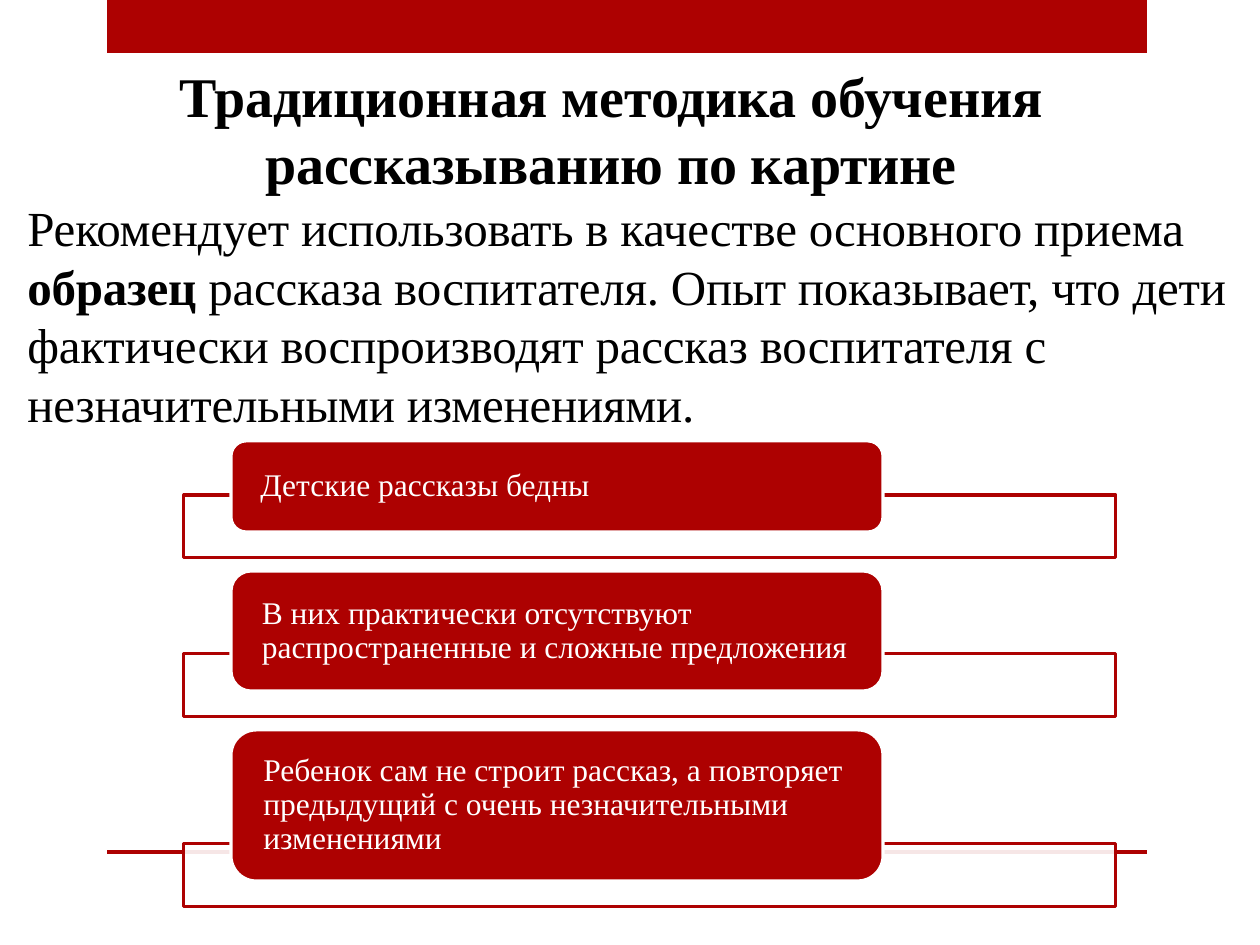
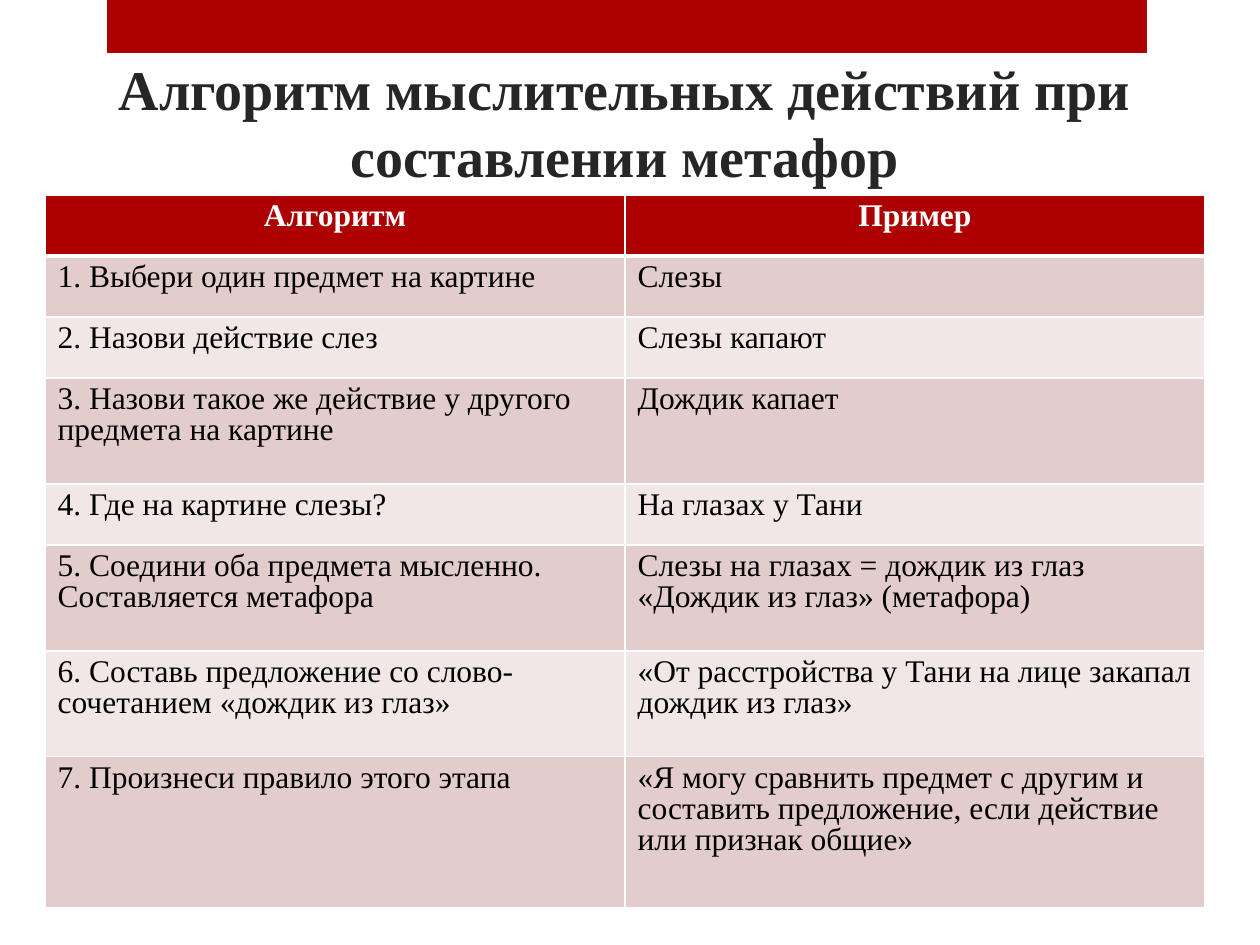
import dataclasses

import pptx
import pptx.dml.color
import pptx.enum.shapes
import pptx.enum.text
import pptx.oxml
import pptx.oxml.ns
import pptx.util

PX = 914400 / 126
FONT = "Times New Roman"
RED, WHITE, BLACK, CHARCOAL = "AD0101", "FFFFFF", "000000", "262626"
ROW_TINTS = ("E3CCCC", "F1E7E7")
SHAPES = pptx.enum.shapes.MSO_SHAPE
ANCHOR = pptx.enum.text.MSO_ANCHOR
ALIGN = pptx.enum.text.PP_ALIGN


@dataclasses.dataclass(frozen=True)
class Box:
    left: int
    top: int
    width: int
    height: int

    def emu(self) -> list[int]:
        return [px(n) for n in dataclasses.astuple(self)]


@dataclasses.dataclass(frozen=True)
class Style:
    size: int
    color: str
    bold: bool = False
    spacing: int = 0  # hundredths of a point


@dataclasses.dataclass(frozen=True)
class Finding:
    text: str
    height: int


@dataclasses.dataclass(frozen=True)
class Step:
    action: str
    example: str
    lines: int = 1


def px(length: int) -> int:
    return round(length * PX)


def rgb(color: str) -> pptx.dml.color.RGBColor:
    return pptx.dml.color.RGBColor.from_string(color)


def add_run(paragraph, text: str, style: Style) -> None:
    run = paragraph.add_run()
    run.text = text
    run.font.name = FONT
    run.font.size = pptx.util.Pt(style.size)
    run.font.bold = style.bold
    run.font.color.rgb = rgb(style.color)
    if style.spacing:
        run._r.get_or_add_rPr().set("spc", str(style.spacing))


def add_block(slide, kind, box: Box, fill: str, line: str = ""):
    block = slide.shapes.add_shape(kind, *box.emu())
    block.shadow.inherit = False
    block.fill.solid()
    block.fill.fore_color.rgb = rgb(fill)
    if line:
        block.line.color.rgb = rgb(line)
        block.line.width = pptx.util.Pt(1.75)
    else:
        block.line.fill.background()
    return block


# Shared frame: top band, bottom rule and title
BANDS = (Box(107, 0, 1040, 53), Box(107, 850, 1040, 4))


def add_slide(deck, text: str, box: Box, style: Style, anchor):
    slide = deck.slides.add_slide(deck.slide_layouts[5])
    for band in BANDS:
        add_block(slide, SHAPES.RECTANGLE, band, RED)
    title = slide.shapes.title
    title.left, title.top, title.width, title.height = box.emu()
    frame = title.text_frame
    frame.word_wrap = True
    frame.auto_size = pptx.enum.text.MSO_AUTO_SIZE.NONE
    frame.vertical_anchor = anchor
    frame.paragraphs[0].alignment = ALIGN.CENTER
    add_run(frame.paragraphs[0], text, style)
    return slide


# Slide 1: traditional method
FINDINGS = (
    Finding("Детские рассказы бедны", 91),
    Finding("В них практически отсутствуют распространенные и сложные предложения", 120),
    Finding("Ребенок сам не строит рассказ, а повторяет предыдущий "
            "с очень незначительными изменениями", 151),
)
FINDINGS_TOP, PANEL_HEIGHT, PANEL_OVERLAP, PANEL_GAP = 441, 63, 37, 13


def add_finding(slide, finding: Finding, top: int) -> int:
    """Draw a card over its panel and return the top of the next card."""
    panel_top = top + finding.height - PANEL_OVERLAP
    panel = add_block(slide, SHAPES.RECTANGLE,
                      Box(184, panel_top, 932, PANEL_HEIGHT), WHITE, RED)
    fill_color = panel.fill._xPr.find(".//" + pptx.oxml.ns.qn("a:srgbClr"))
    fill_color.append(pptx.oxml.parse_xml(
        f'<a:alpha {pptx.oxml.ns.nsdecls("a")} val="90000"/>'))

    card = add_block(slide, SHAPES.ROUNDED_RECTANGLE,
                     Box(231, top, 652, finding.height), RED, WHITE)
    frame = card.text_frame
    frame.word_wrap = True
    frame.vertical_anchor = ANCHOR.MIDDLE
    frame.margin_left = frame.margin_right = px(25)
    frame.margin_top = frame.margin_bottom = 0
    paragraph = frame.paragraphs[0]
    paragraph.alignment = ALIGN.LEFT
    paragraph.line_spacing = 0.9
    add_run(paragraph, finding.text, Style(18, WHITE))
    return panel_top + PANEL_HEIGHT + PANEL_GAP


def build_method_slide(deck) -> None:
    slide = add_slide(deck, "Традиционная методика обучения рассказыванию по картине",
                      Box(115, 55, 992, 149), Style(32, BLACK, True, -10), ANCHOR.TOP)
    advice = slide.shapes.add_textbox(*Box(15, 190, 1230, 250).emu()).text_frame
    advice.word_wrap = True
    advice.margin_right = px(6)
    advice.vertical_anchor = ANCHOR.MIDDLE
    plain, strong = Style(28, BLACK, False, -10), Style(28, BLACK, True, -10)
    for text, style in (
        ("Рекомендует использовать в качестве основного приема ", plain),
        ("образец", strong),
        (" рассказа воспитателя. Опыт показывает, что дети фактически воспроизводят "
         "рассказ воспитателя с незначительными изменениями.", plain),
    ):
        add_run(advice.paragraphs[0], text, style)

    top = FINDINGS_TOP
    for finding in FINDINGS:
        top = add_finding(slide, finding, top)


# Slide 2: algorithm table
HEADER = Step("Алгоритм", "Пример")
STEPS = (
    Step("1. Выбери один предмет на картине", "Слезы"),
    Step("2. Назови действие слез", "Слезы капают"),
    Step("3. Назови такое же действие у другого предмета на картине", "Дождик капает", 2),
    Step("4. Где на картине слезы?", "На глазах у Тани"),
    Step("5. Соедини оба предмета мысленно. Составляется метафора",
         "Слезы на глазах = дождик из глаз\n«Дождик из глаз» (метафора)", 2),
    Step("6. Составь предложение со слово-сочетанием «дождик из глаз»",
         "«От расстройства у Тани на лице закапал дождик из глаз»", 2),
    Step("7. Произнеси правило этого этапа",
         "«Я могу сравнить предмет с другим и составить предложение, "
         "если действие или признак общие»", 3),
)
COLUMN_WIDTH = 580


def row_height(step: Step) -> int:
    return 16 + 45 * step.lines


def set_borders(cell, widths: dict[str, int]) -> None:
    properties = cell._tc.get_or_add_tcPr()
    for index, (side, width) in enumerate(widths.items()):
        properties.insert(index, pptx.oxml.parse_xml(
            f'<a:{side} {pptx.oxml.ns.nsdecls("a")} w="{pptx.util.Pt(width)}">'
            f'<a:solidFill><a:srgbClr val="{WHITE}"/></a:solidFill></a:{side}>'))


def fill_cell(cell, text: str, row: int) -> None:
    is_header = row == 0
    cell.fill.solid()
    cell.fill.fore_color.rgb = rgb(RED if is_header else ROW_TINTS[(row - 1) % 2])
    set_borders(cell, {"lnL": 1, "lnR": 1, "lnT": 3 if row == 1 else 1,
                       "lnB": 3 if is_header else 1})
    paragraph = cell.text_frame.paragraphs[0]
    paragraph.alignment = ALIGN.CENTER if is_header else ALIGN.LEFT
    paragraph.line_spacing = 0.9
    style = Style(18, WHITE if is_header else BLACK, is_header)
    for index, line in enumerate(text.split("\n")):
        if index:
            paragraph.add_line_break()
        add_run(paragraph, line, style)


def build_algorithm_slide(deck) -> None:
    slide = add_slide(deck, "Алгоритм мыслительных действий при составлении метафор",
                      Box(54, 55, 1142, 140), Style(32, CHARCOAL, True), ANCHOR.BOTTOM)
    steps = (HEADER, *STEPS)
    area = Box(45, 195, 2 * COLUMN_WIDTH, sum(map(row_height, steps)))
    algorithm = slide.shapes.add_table(len(steps), 2, *area.emu()).table
    for column in algorithm.columns:
        column.width = px(COLUMN_WIDTH)
    for row, step in enumerate(steps):
        algorithm.rows[row].height = px(row_height(step))
        for column, text in enumerate((step.action, step.example)):
            fill_cell(algorithm.cell(row, column), text, row)


def main() -> None:
    deck = pptx.Presentation()
    deck.slide_width, deck.slide_height = px(1260), px(945)
    build_method_slide(deck)
    build_algorithm_slide(deck)
    deck.save("out.pptx")


if __name__ == "__main__":
    main()
